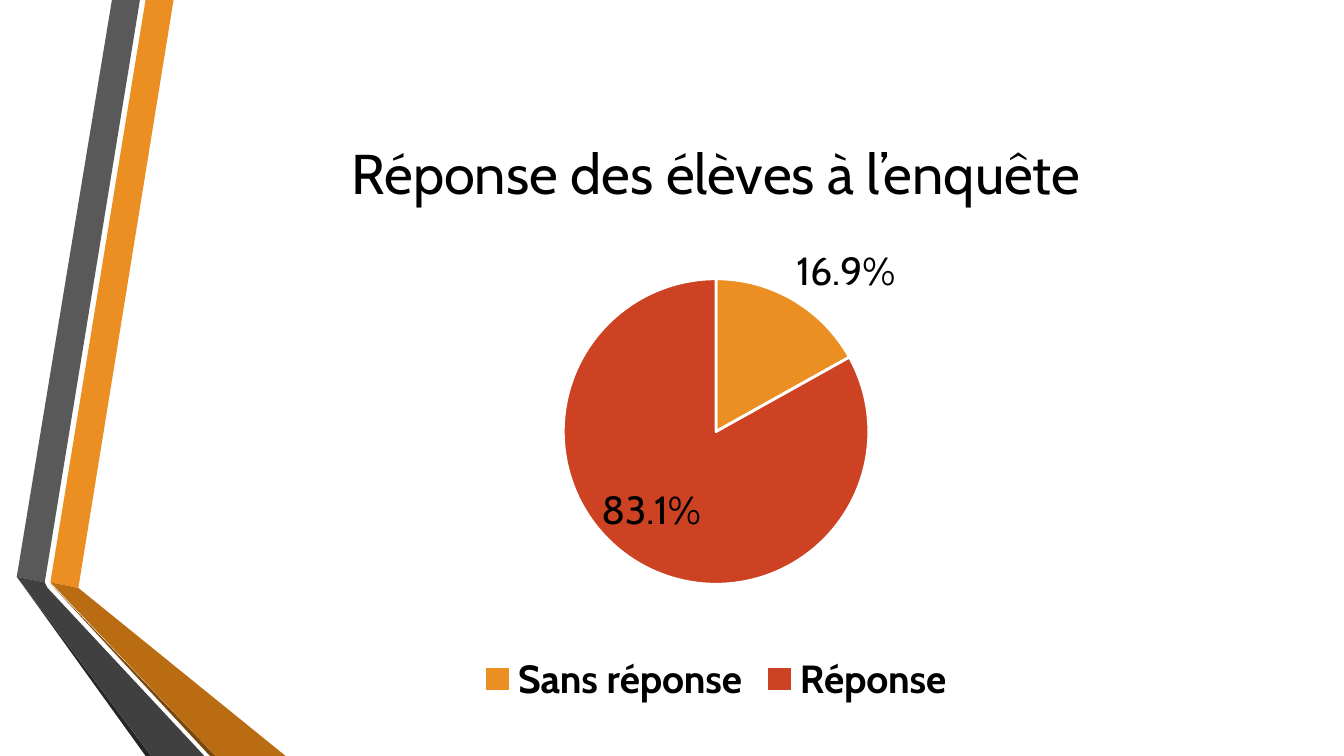
from pptx import Presentation
from pptx.chart.data import CategoryChartData
from pptx.dml.color import RGBColor
from pptx.enum.chart import XL_CHART_TYPE as ChartType
from pptx.enum.chart import XL_LABEL_POSITION as LabelPosition
from pptx.enum.chart import XL_LEGEND_POSITION as LegendPosition
from pptx.enum.text import MSO_ANCHOR as Anchor
from pptx.enum.text import PP_ALIGN as Align
from pptx.oxml import parse_xml
from pptx.oxml.ns import nsdecls
from pptx.util import Pt


def color(value):
    return RGBColor.from_string(value)


class SlideBuilder:
    """Draws styled elements, measured in points, on the current slide."""

    font_name = "Cabin"
    text_color = "000000"

    def __init__(self, slide):
        self.slide = slide

    def style_font(self, font, size, bold):
        for name, value in {"name": self.font_name, "size": Pt(size), "bold": bold}.items():
            setattr(font, name, value)
        font.color.rgb = color(self.text_color)

    def place(self, shape, box):
        for name, value in zip(("left", "top", "width", "height"), box):
            setattr(shape, name, Pt(value))

    def title(self, text, box, size):
        shape = self.slide.shapes.title
        self.place(shape, box)
        frame = shape.text_frame
        frame.text = text
        frame.word_wrap = True
        frame.vertical_anchor = Anchor.MIDDLE
        paragraph = frame.paragraphs[0]
        paragraph.alignment = Align.CENTER
        self.style_font(paragraph.runs[0].font, size, False)

    def polygon(self, points, fill):
        start, *others = points
        builder = self.slide.shapes.build_freeform(*start, scale=float(Pt(1)))
        builder.add_line_segments(others, close=True)
        shape = builder.convert_to_shape()
        shape.shadow.inherit = False
        shape.fill.solid()
        shape.fill.fore_color.rgb = color(fill)
        shape.line.fill.background()

    def pie(self, slices, box, plot_area, size):
        data = CategoryChartData(number_format="0.0")
        data.categories = [name for name, *_ in slices]
        data.add_series("Series 1", [value for _, value, *_ in slices])
        frame = self.slide.shapes.add_chart(ChartType.PIE, *map(Pt, box), data)
        chart = frame.chart
        self.style_font(chart.font, size, True)
        chart.has_title = False
        chart.has_legend = True
        chart.legend.position = LegendPosition.BOTTOM
        chart.legend.include_in_layout = False
        self.style_font(chart.legend.font, size, True)
        plot = chart.plots[0]
        plot.vary_by_categories = True
        series = plot.series[0]
        labels = series.data_labels
        labels.show_value = True
        labels.number_format = "0.0"
        labels.number_format_is_linked = False
        self.style_font(labels.font, size, True)
        for index, (_, value, fill, position, offset) in enumerate(slices):
            point = series.points[index]
            point.format.fill.solid()
            point.format.fill.fore_color.rgb = color(fill)
            point.format.line.color.rgb = color("FFFFFF")
            point.format.line.width = Pt(2)
            run = point.data_label.text_frame.paragraphs[0].add_run()
            run.text = f"{value}%"
            self.style_font(run.font, size, False)
            point.data_label.position = position
            if offset:
                label = chart.element.xpath(f".//c:dLbl[c:idx/@val='{index}']")[0]
                self.set_layout(label, 1, zip("xy", offset))
        edges = [("layoutTarget", "inner"), ("xMode", "edge"), ("yMode", "edge")]
        area = chart.element.find(".//{*}plotArea")
        self.set_layout(area, 0, [*edges, *zip("xywh", plot_area)])

    def set_layout(self, parent, index, settings):
        for existing in parent.findall("{*}layout"):
            parent.remove(existing)
        content = "".join(f'<c:{name} val="{value}"/>' for name, value in settings)
        layout = parse_xml(
            f'<c:layout {nsdecls("c")}><c:manualLayout>{content}</c:manualLayout></c:layout>'
        )
        parent.insert(index, layout)


RIBBONS = [
    ("EB8F22", [(36, 416), (55.5, 420), (124.5, 0), (104.5, 0)]),
    ("595959", [(100, 0), (80, 0), (11.5, 412.5), (31.5, 415.5)]),
    ("262626", [(11.5, 412.5), (104.5, 540), (108.5, 540)]),
    ("7B480B", [(36, 417), (150, 540), (154, 540)]),
    ("B96C11", [(36, 416.5), (154, 540), (204, 540), (55.5, 420)]),
    ("404040", [(145.5, 540), (34.5, 420), (31.5, 415.5), (11.5, 412.5), (108.5, 540)]),
]
SLICES = [
    ("Sans réponse", 16.9, "EB8F22", LabelPosition.OUTSIDE_END, None),
    ("Réponse", 83.1, "CD4223", LabelPosition.INSIDE_END, (-0.05, -0.05)),
]


def main():
    presentation = Presentation()
    presentation.slide_width = Pt(960)
    presentation.slide_height = Pt(540)
    builder = SlideBuilder(presentation.slides.add_slide(presentation.slide_layouts[5]))
    for fill, points in RIBBONS:
        builder.polygon(points, fill)
    builder.title("Réponse des élèves à l’enquête", (117, 54, 789, 138), 40)
    builder.pie(SLICES, (223.5, 161, 576, 346.5), (0.31, 0.11, 0.38, 0.63), 28)
    presentation.save("out.pptx")


if __name__ == "__main__":
    main()
